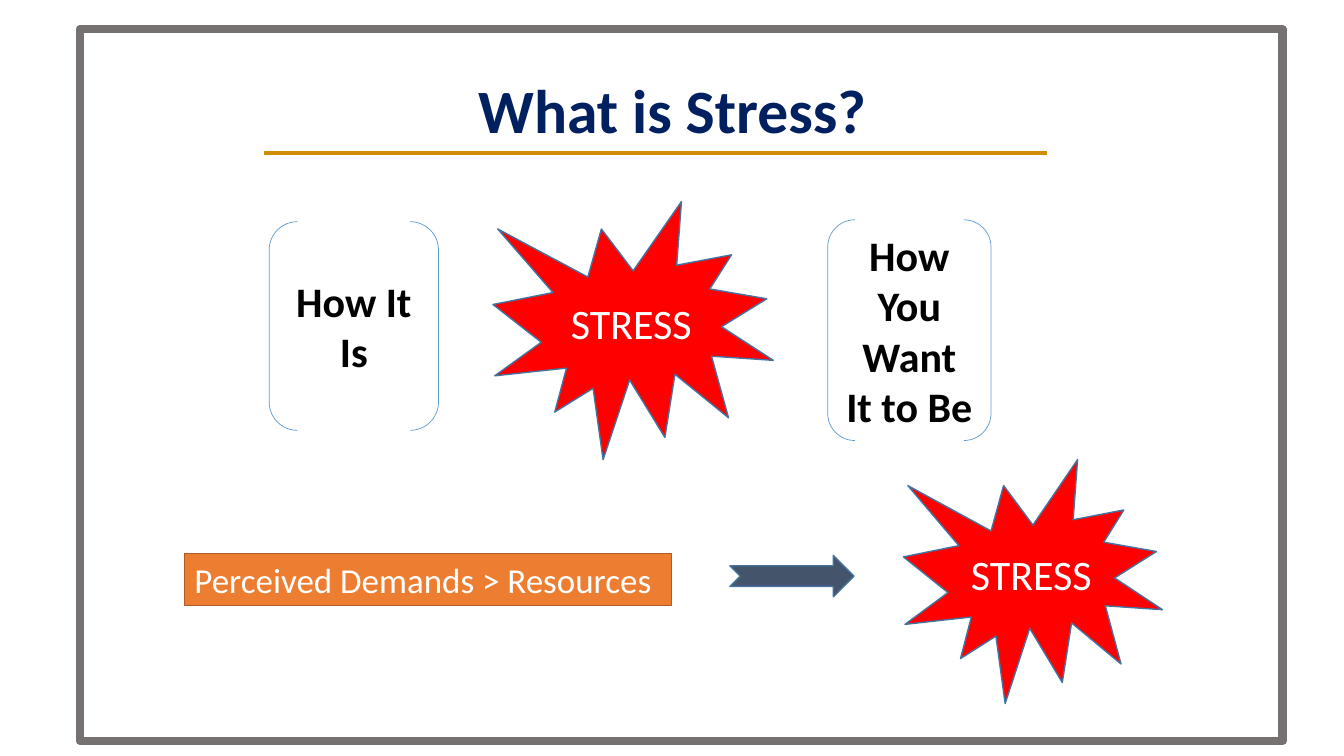
from pptx import Presentation
from pptx.dml.color import RGBColor
from pptx.enum.shapes import MSO_CONNECTOR, MSO_SHAPE
from pptx.enum.text import MSO_ANCHOR, PP_ALIGN
from pptx.oxml.ns import qn
from pptx.util import Inches, Pt
from lxml import etree

RECT = MSO_SHAPE.RECTANGLE
BURST = MSO_SHAPE.EXPLOSION1
BRACKETS = MSO_SHAPE.DOUBLE_BRACKET
ARROW = MSO_SHAPE.NOTCHED_RIGHT_ARROW
STRAIGHT = MSO_CONNECTOR.STRAIGHT
CENTER, LEFT = PP_ALIGN.CENTER, PP_ALIGN.LEFT
MIDDLE, TOP = MSO_ANCHOR.MIDDLE, MSO_ANCHOR.TOP

WHITE = RGBColor(0xFF, 0xFF, 0xFF)
BLACK = RGBColor(0x00, 0x00, 0x00)
NAVY = RGBColor(0x00, 0x20, 0x60)
GRAY = RGBColor(0x76, 0x71, 0x71)
RED = RGBColor(0xFF, 0x00, 0x00)
STEEL = RGBColor(0x43, 0x73, 0x9E)
BLUE = RGBColor(0x5B, 0x9B, 0xD5)
ORANGE = RGBColor(0xED, 0x7D, 0x31)
RUST = RGBColor(0xAF, 0x5C, 0x24)
SLATE = RGBColor(0x44, 0x54, 0x6A)
GOLD = RGBColor(0xD1, 0x8D, 0x05)


class Canvas:
    """Draws on one slide; lengths are percentages of its width and height."""
    font = "Calibri"

    def __init__(self, prs):
        self.width, self.height = prs.slide_width, prs.slide_height
        self.s = prs.slides.add_slide(prs.slide_layouts[6])

    def x(self, share):
        return round(self.width * share / 100)

    def y(self, share):
        return round(self.height * share / 100)

    def box(self, left, top, width, height):
        return self.x(left), self.y(top), self.x(width), self.y(height)

    def set_text(self, sp, text, size, color, bold=False, align=CENTER, anchor=MIDDLE):
        tf = sp.text_frame
        tf.word_wrap = True
        tf.vertical_anchor = anchor
        tf.text = text
        p = tf.paragraphs[0]
        p.alignment = align
        font = p.runs[0].font
        font.name, font.size, font.bold = self.font, Pt(size), bold
        font.color.rgb = color
        return p

    def shape(self, kind, area, line, weight, fill=None):
        sp = self.s.shapes.add_shape(kind, *self.box(*area))
        sp.shadow.inherit = False
        if fill is None:
            sp.fill.background()
        else:
            sp.fill.solid()
            sp.fill.fore_color.rgb = fill
        sp.line.color.rgb = line
        sp.line.width = Pt(weight)
        return sp

    def title(self, text, area):
        sp = self.s.shapes.add_textbox(*self.box(*area))
        self.set_text(sp, text, 44, NAVY, bold=True).line_spacing = 0.9

    def burst(self, text, area):
        sp = self.shape(BURST, area, STEEL, 1, RED)
        self.set_text(sp, text, 30, WHITE)

    def bracketed(self, text, area):
        sp = self.shape(BRACKETS, area, BLUE, 0.5)
        self.set_text(sp, text, 30, BLACK, bold=True)

    def label(self, text, area):
        sp = self.shape(RECT, area, RUST, 1, ORANGE)
        self.set_text(sp, text, 25, WHITE, align=LEFT, anchor=TOP)

    def rule(self, left, right, top):
        y = self.y(top)
        line = self.s.shapes.add_connector(STRAIGHT, self.x(left), y, self.x(right), y)
        line.line.color.rgb = GOLD
        line.line.width = Pt(3)
        etree.SubElement(line._element.spPr, qn("a:effectLst"))


def main():
    prs = Presentation()
    prs.slide_width, prs.slide_height = Inches(13.33), Inches(7.5)
    c = Canvas(prs)

    # Frame and heading
    c.shape(RECT, (5.93, 3.87, 89.5, 94.13), GRAY, 6)
    c.title("What is Stress?", (6.9, 5.33, 86.27, 19.33))

    # Stress between reality and wishes
    c.burst("STRESS", (36.68, 26.67, 20.86, 34.13))
    c.bracketed("How It Is", (20.03, 29.33, 12.6, 27.6))
    c.bracketed("How You Want It to Be", (61.59, 29.07, 12.15, 29.2))

    # Demands above resources lead to stress
    c.label("Perceived Demands > Resources", (13.73, 73.2, 36.23, 6.93))
    c.shape(ARROW, (54.31, 73.47, 9.23, 5.47), STEEL, 1, SLATE)
    c.burst("STRESS", (67.22, 60.8, 19.28, 32.27))

    # Line under the heading
    c.rule(19.65, 77.87, 20.27)

    prs.save("out.pptx")


if __name__ == "__main__":
    main()
